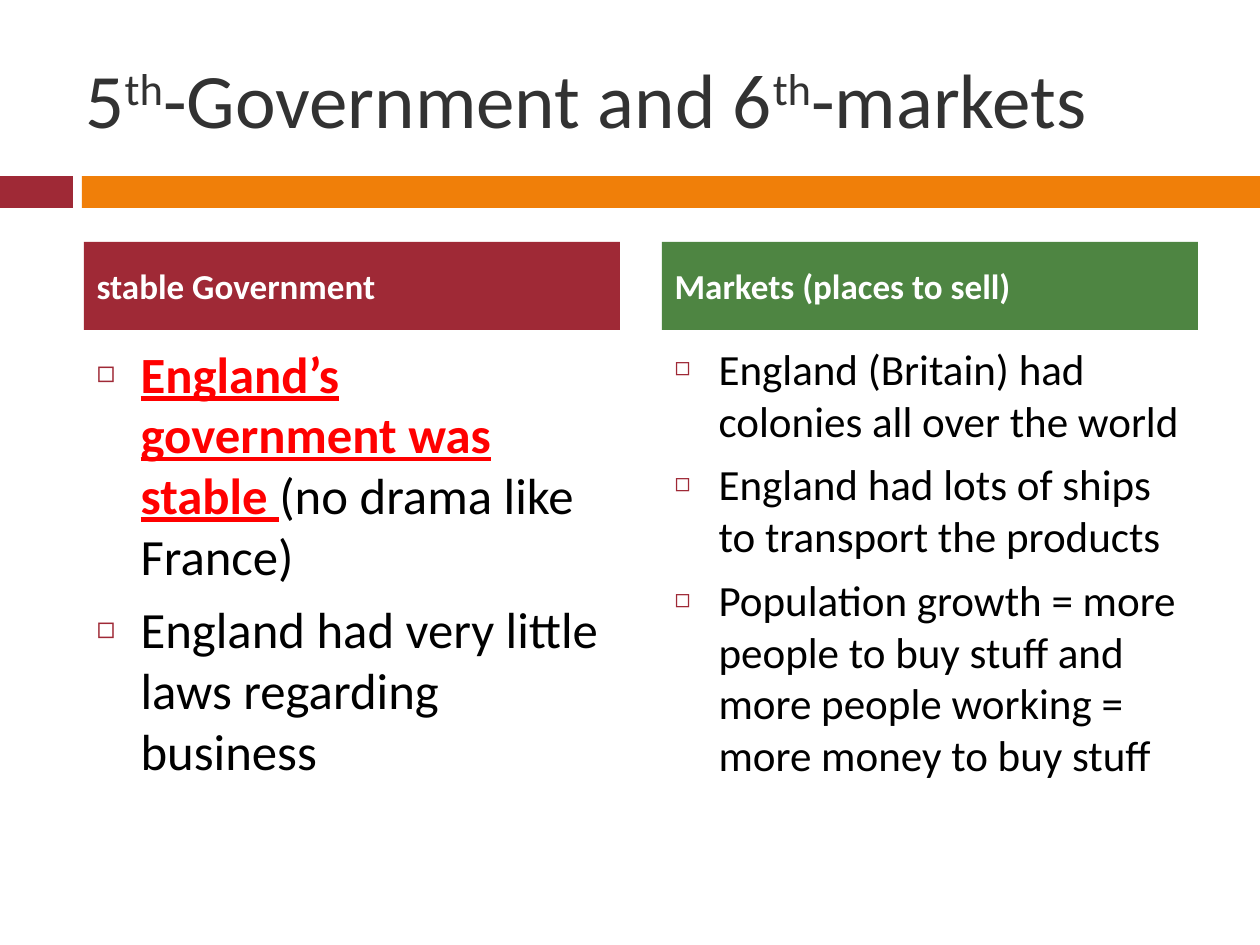
import pptx
import pptx.dml.color
import pptx.enum.shapes
import pptx.enum.text
import pptx.oxml
import pptx.oxml.ns
import pptx.util

RGBColor = pptx.dml.color.RGBColor
CRIMSON = RGBColor(0x9F, 0x29, 0x36)
ORANGE = RGBColor(0xF0, 0x7F, 0x09)
GREEN = RGBColor(0x4E, 0x85, 0x42)
CHARCOAL = RGBColor(0x32, 0x32, 0x32)
RED = RGBColor(0xFF, 0x00, 0x00)
BLACK = RGBColor(0x00, 0x00, 0x00)
WHITE = RGBColor(0xFF, 0xFF, 0xFF)

PIXEL = 914400 // 126
FONT = "Calibri"
KEY_POINT = {"color": RED, "bold": True, "underline": True}
SUPERSCRIPT = {"baseline": 30000}
COLUMN_LEFTS = (84, 662)
COLUMN_WIDTH = 536

TITLE = [("5", {}), ("th", SUPERSCRIPT), ("-Government and 6", {}),
         ("th", SUPERSCRIPT), ("-markets", {})]
COLUMNS = [
    {"heading": "stable Government", "fill": CRIMSON, "size": 29, "points": [
        [("England’s government was stable ", KEY_POINT),
         ("(no drama like France)", {})],
        [("England had very little laws regarding business", {})]]},
    {"heading": "Markets (places to sell)", "fill": GREEN, "size": 24.6, "points": [
        [("England (Britain) had colonies all over the world", {})],
        [("England had lots of ships to transport the products", {})],
        [("Population growth = more people to buy stuff and more people "
          "working = more money to buy stuff", {})]]},
]


def place(part, left, top, width, height):
    """Move and size a part, in pixels."""
    box = {"left": left, "top": top, "width": width, "height": height}
    for side, pixels in box.items():
        setattr(part, side, pixels * PIXEL)


def set_frame(part, anchor):
    """Give a placeholder its wrapping and anchor; return its text frame."""
    frame = part.text_frame
    settings = {"word_wrap": True, "vertical_anchor": anchor,
                "auto_size": pptx.enum.text.MSO_AUTO_SIZE.NONE}
    for name, value in settings.items():
        setattr(frame, name, value)
    return frame


def write_runs(paragraph, runs, size, color, bold=False):
    """Write runs of (text, changes) over a common format."""
    paragraph.alignment = pptx.enum.text.PP_ALIGN.LEFT
    for text, changes in runs:
        run = paragraph.add_run()
        run.text = text
        look = {"name": FONT, "size": pptx.util.Pt(size), "bold": bold, **changes}
        run.font.color.rgb = look.pop("color", color)
        baseline = look.pop("baseline", None)
        for name, value in look.items():
            setattr(run.font, name, value)
        if baseline:
            run._r.get_or_add_rPr().set("baseline", str(baseline))


def add_bullet(paragraph):
    """Give a paragraph a hanging indent and a small square bullet."""
    properties = paragraph._p.get_or_add_pPr()
    indent = 44 * PIXEL
    properties.set("marL", str(indent))
    properties.set("indent", str(-indent))
    namespace = pptx.oxml.ns.nsdecls("a")
    for xml in (f'<a:buClr {namespace}><a:srgbClr val="{CRIMSON}"/></a:buClr>',
                f'<a:buSzPct {namespace} val="60000"/>',
                f'<a:buFont {namespace} typeface="{FONT}"/>',
                f'<a:buChar {namespace} char="◻"/>'):
        properties.append(pptx.oxml.parse_xml(xml))


def add_band(slide, left, width, color):
    """Draw one piece of the band under the title."""
    band = slide.shapes.add_shape(
        pptx.enum.shapes.MSO_SHAPE.RECTANGLE, 0, 0, 0, 0)
    place(band, left, 176, width, 32)
    band.shadow.inherit = False
    band.fill.solid()
    band.fill.fore_color.rgb = color
    band.line.fill.background()


def fill_title(title):
    """Place and write the slide title."""
    place(title, 73, 38, 1124, 120)
    frame = set_frame(title, pptx.enum.text.MSO_ANCHOR.MIDDLE)
    write_runs(frame.paragraphs[0], TITLE, 44, CHARCOAL)


def fill_heading(heading, left, column):
    """Place and write the coloured heading of a column."""
    place(heading, left, 242, COLUMN_WIDTH, 88)
    heading.fill.solid()
    heading.fill.fore_color.rgb = column["fill"]
    frame = set_frame(heading, pptx.enum.text.MSO_ANCHOR.MIDDLE)
    paragraph = frame.paragraphs[0]
    paragraph.space_before = pptx.util.Pt(7)
    write_runs(paragraph, [(column["heading"], {})], 20, WHITE, bold=True)


def fill_points(body, left, column):
    """Place and write the bulleted points of a column."""
    place(body, left, 336, COLUMN_WIDTH, 494)
    frame = set_frame(body, pptx.enum.text.MSO_ANCHOR.TOP)
    for index, runs in enumerate(column["points"]):
        paragraph = frame.add_paragraph() if index else frame.paragraphs[0]
        paragraph.space_before = pptx.util.Pt(7)
        add_bullet(paragraph)
        write_runs(paragraph, runs, column["size"], BLACK)


def main():
    """Build the slide and save it."""
    deck = pptx.Presentation()
    deck.slide_width = 1260 * PIXEL
    deck.slide_height = 945 * PIXEL
    comparison = deck.slide_layouts.get_by_name("Comparison")
    slide = deck.slides.add_slide(comparison)
    add_band(slide, 0, 73, CRIMSON)
    add_band(slide, 82, 1178, ORANGE)
    title, *parts = slide.placeholders
    fill_title(title)
    for left, column, heading, body in zip(
            COLUMN_LEFTS, COLUMNS, parts[::2], parts[1::2]):
        fill_heading(heading, left, column)
        fill_points(body, left, column)
    deck.save("out.pptx")


main()
